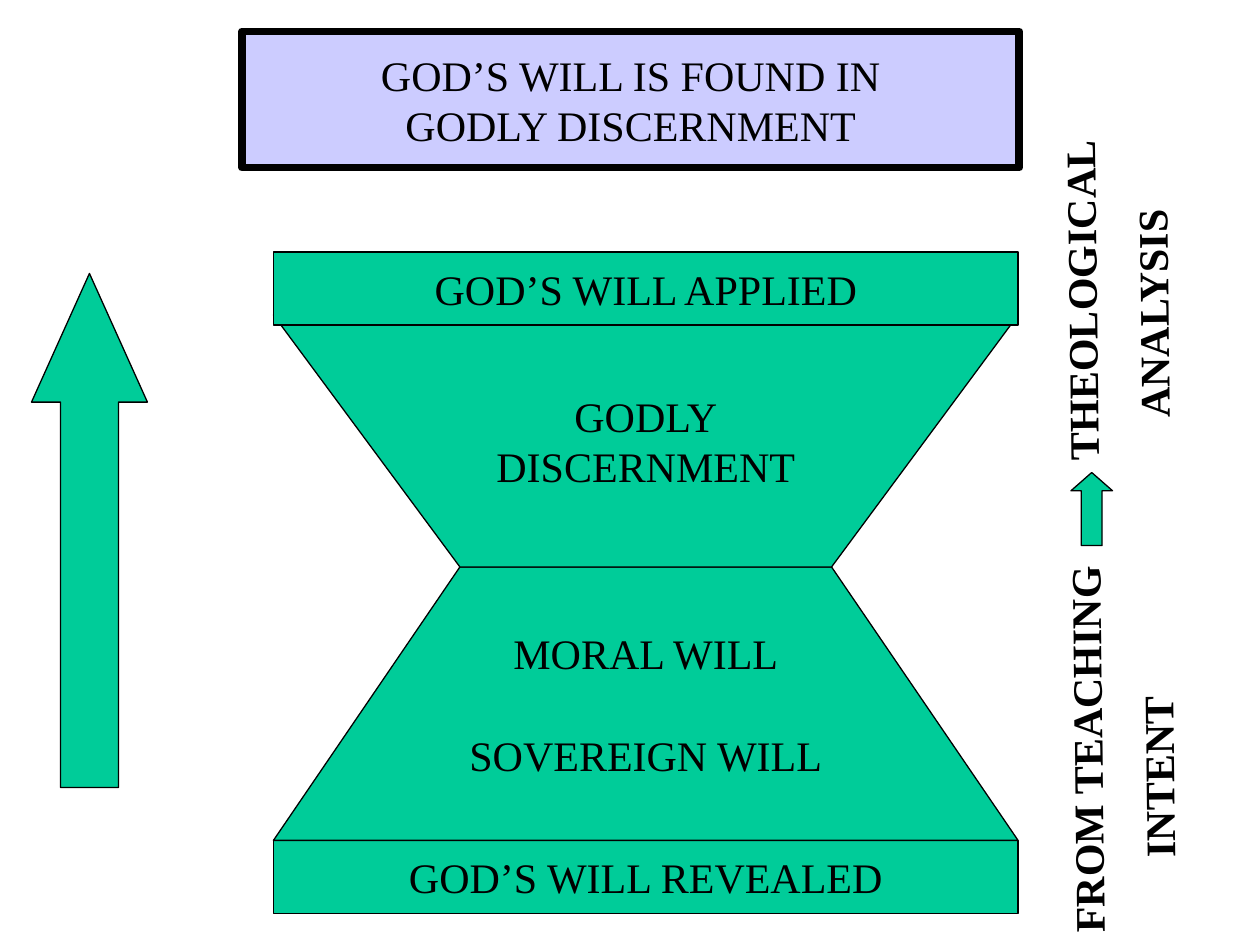
from lxml import etree
from pptx import Presentation
from pptx.dml.color import RGBColor
from pptx.enum.shapes import MSO_SHAPE
from pptx.enum.text import MSO_ANCHOR, PP_ALIGN
from pptx.oxml.ns import qn
from pptx.util import Inches, Pt

RECTANGLE, UP_ARROW = MSO_SHAPE.RECTANGLE, MSO_SHAPE.UP_ARROW
MIDDLE, CENTER = MSO_ANCHOR.MIDDLE, PP_ALIGN.CENTER

GREEN = RGBColor(0x00, 0xCC, 0x99)
LAVENDER = RGBColor(0xCC, 0xCC, 0xFF)
BLACK = RGBColor(0x00, 0x00, 0x00)
FONT = "Times New Roman"

# Hourglass edges, in inches
LEFT, RIGHT = 2.17, 8.08
WAIST_LEFT, WAIST_RIGHT, WAIST_Y = 3.65, 6.6, 4.5
BAR_HEIGHT = 0.58


def style_shape(shape, fill=GREEN, line_width=0.75):
    shape.fill.solid()
    shape.fill.fore_color.rgb = fill
    shape.line.color.rgb = BLACK
    shape.line.width = Pt(line_width)


def format_paragraph(paragraph, bold=False):
    font = paragraph.font
    font.name, font.size, font.bold = FONT, Pt(24), bold
    font.color.rgb = BLACK


def write_centered(shape, lines, gap=0):
    """Write one centred paragraph per line, with a gap in points between."""
    frame = shape.text_frame
    frame.text = "\n".join(lines)
    frame.word_wrap = False
    frame.vertical_anchor = MIDDLE
    for index, paragraph in enumerate(frame.paragraphs):
        paragraph.alignment = CENTER
        paragraph.space_before = Pt(gap if index else 0)
        format_paragraph(paragraph)


def add_title(slide, lines):
    title = slide.shapes.title
    title.left, title.top = Inches(1.92), Inches(0.25)
    title.width, title.height = Inches(6.17), Inches(1.08)
    style_shape(title, LAVENDER, 4.5)
    write_centered(title, lines)


def add_preset(slide, preset, left, top, width, height):
    shape = slide.shapes.add_shape(
        preset, Inches(left), Inches(top), Inches(width), Inches(height))
    shape.shadow.inherit = False
    style_shape(shape)
    return shape


def add_bar(slide, top, text):
    bar = add_preset(slide, RECTANGLE, LEFT, top, RIGHT - LEFT, BAR_HEIGHT)
    write_centered(bar, [text])


def add_funnel(slide, wide_y, lines, gap=0):
    """Add the half of the hourglass between its wide edge and the waist."""
    corners = [(LEFT, wide_y), (WAIST_LEFT, WAIST_Y),
               (WAIST_RIGHT, WAIST_Y), (RIGHT, wide_y)]
    points = [(Inches(x), Inches(y)) for x, y in corners]
    builder = slide.shapes.build_freeform(*points[0])
    builder.add_line_segments(points[1:], close=True)
    funnel = builder.convert_to_shape()
    funnel.shadow.inherit = False
    style_shape(funnel)
    write_centered(funnel, lines, gap)


def add_arrow(slide, left, top, width, height, head):
    arrow = add_preset(slide, UP_ARROW, left, top, width, height)
    arrow.adjustments[0] = 0.5
    arrow.adjustments[1] = head


def set_tab_stops(paragraph, positions):
    properties = paragraph._p.get_or_add_pPr()
    tab_list = etree.Element(qn("a:tabLst"))
    for position in positions:
        etree.SubElement(tab_list, qn("a:tab"),
                         pos=str(Inches(position)), algn="l")
    # Tab stops come before the default run properties
    properties.find(qn("a:defRPr")).addprevious(tab_list)


def add_side_label(slide, lines):
    """Add the upward-reading label; each line is (text, tab stops)."""
    box = slide.shapes.add_textbox(
        Inches(5.63), Inches(3.7), Inches(6.5), Inches(1.1))
    box.rotation = 269.3
    frame = box.text_frame
    frame.text = "\n".join(text for text, _ in lines)
    frame.word_wrap = True
    frame.vertical_anchor = MIDDLE
    for paragraph, (_, stops) in zip(frame.paragraphs, lines):
        paragraph.space_before = Pt(12)
        format_paragraph(paragraph, bold=True)
        set_tab_stops(paragraph, stops)


def main():
    presentation = Presentation()
    presentation.slide_width = Inches(10)
    presentation.slide_height = Inches(7.5)
    slide = presentation.slides.add_slide(presentation.slide_layouts[5])

    add_title(slide, ["GOD’S WILL IS FOUND IN", "GODLY DISCERNMENT"])

    # Hourglass, from the bottom up
    add_bar(slide, 6.67, "GOD’S WILL REVEALED")
    add_funnel(slide, 6.67, ["MORAL WILL", "SOVEREIGN WILL"], gap=29)
    add_funnel(slide, 2.5, ["GODLY", "DISCERNMENT"])
    add_bar(slide, 2, "GOD’S WILL APPLIED")

    # Direction arrows and side label
    add_arrow(slide, 0.25, 2.17, 0.92, 4.08, head=1.11)
    add_side_label(slide, [("FROM TEACHING\tTHEOLOGICAL", [3.75]),
                           ("\tINTENT\tANALYSIS", [0.59, 4.08])])
    add_arrow(slide, 8.5, 3.75, 0.33, 0.58, head=0.44)

    presentation.save("out.pptx")


if __name__ == "__main__":
    main()
